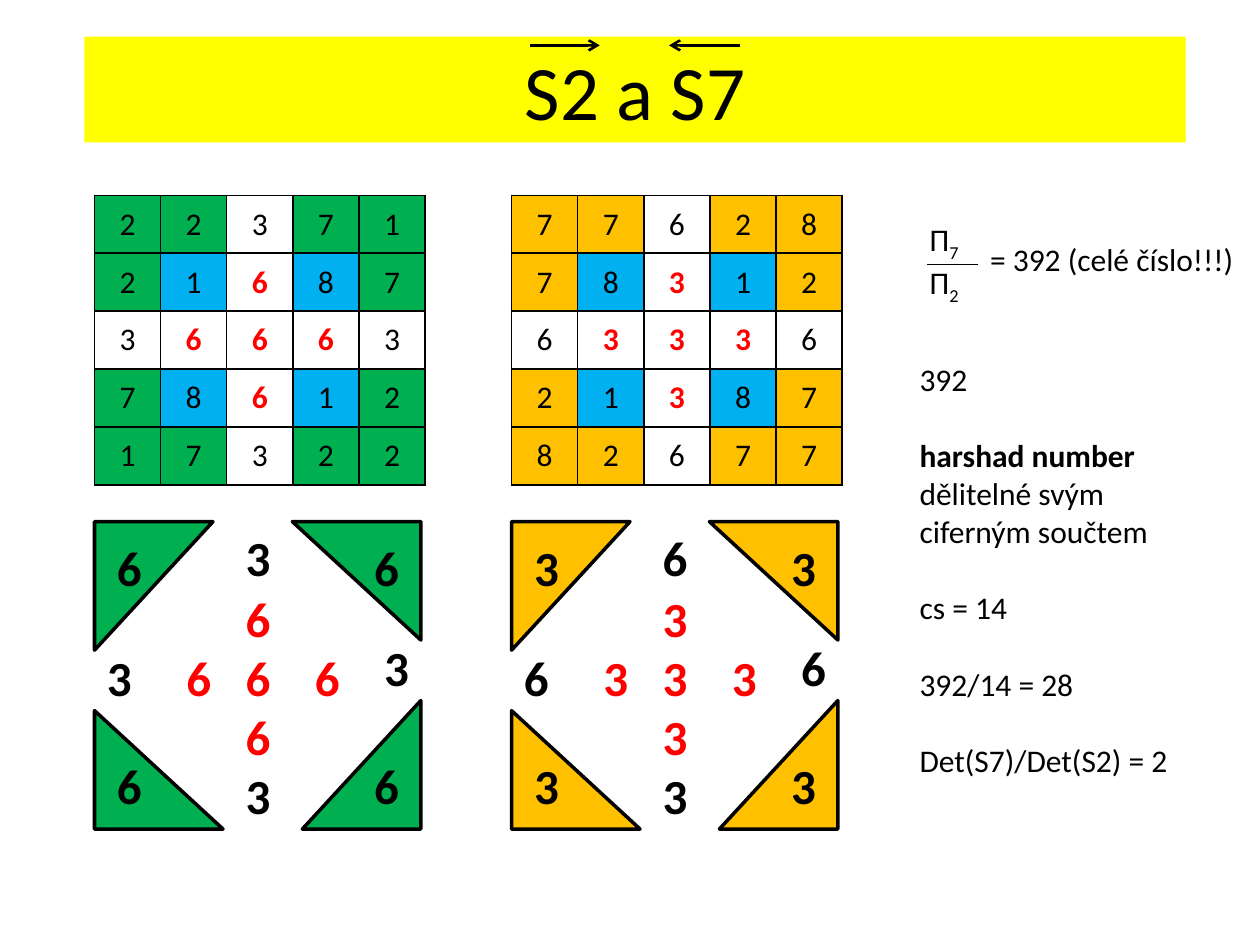
"""Build the slide comparing the number squares S2 and S7."""
from dataclasses import dataclass

from lxml.etree import SubElement
from pptx import Presentation
from pptx.dml.color import RGBColor
from pptx.enum.shapes import MSO_CONNECTOR as Connector, MSO_SHAPE as Shape
from pptx.enum.text import MSO_ANCHOR as Anchor, MSO_AUTO_SIZE as AutoSize, PP_ALIGN as Align
from pptx.oxml.ns import qn
from pptx.slide import Slide
from pptx.text.text import Font
from pptx.util import Inches, Pt

BLACK = RGBColor(0x00, 0x00, 0x00)
WHITE = RGBColor(0xFF, 0xFF, 0xFF)
YELLOW = RGBColor(0xFF, 0xFF, 0x00)
GREEN = RGBColor(0x00, 0xB0, 0x50)
ORANGE = RGBColor(0xFF, 0xC0, 0x00)
BLUE = RGBColor(0x00, 0xB0, 0xF0)
RED = RGBColor(0xFF, 0x00, 0x00)

SQUARE_TOP = 1.55
COLUMN_WIDTH = 0.525
ROW_HEIGHT = 0.46
MIDDLE = 2

CORNERS = [(-0.04, 4.18, 90), (1.57, 4.14, 180), (1.61, 5.6, 270), (0, 5.64, 0)]
CORNER_DIGITS = [(0.08, 4.22), (2.12, 4.22), (2.12, 5.95), (0.08, 5.95)]
EDGE_DIGITS = [(1.1, 4.14), (0, 5.09), (2.2, 5.01), (1.1, 6.03)]
CROSS_DIGITS = [(1.1, 5.09), (1.65, 5.09), (0.63, 5.09), (1.1, 4.62), (1.1, 5.56)]


@dataclass(frozen=True)
class Square:
    """A number square with its reduced corners, edges and cross."""
    left: float
    color: RGBColor
    rows: tuple[str, ...]
    corner: str
    edges: str
    cross: str


@dataclass(frozen=True)
class Note:
    """One paragraph of the explanation."""
    text: str
    gap: int = 22
    bold: bool = False


SQUARES = [
    Square(0.75, GREEN, ("22371", "21687", "36663", "78612", "17322"), "6", "3333", "6"),
    Square(4.06, ORANGE, ("77628", "78312", "63336", "21387", "82677"), "3", "6663", "3"),
]
NOTES = [
    Note("392", gap=0),
    Note("harshad number", bold=True),
    Note("dělitelné svým ciferným součtem", gap=0),
    Note("cs = 14"),
    Note("392/14 = 28"),
    Note("Det(S7)/Det(S2) = 2"),
]


def style(font: Font, size: float, color: RGBColor = BLACK, bold: bool = False) -> None:
    """Apply the slide's typeface and the given look."""
    font.name, font.size, font.bold = "Calibri", Pt(size), bold
    font.color.rgb = color


def add_text(slide: Slide, left: float, top: float, width: float, height: float,
             lines: list[str], size: float = 18, color: RGBColor = BLACK, bold: bool = False):
    """Add a wrapped text box and return its paragraphs."""
    frame = slide.shapes.add_textbox(Inches(left), Inches(top), Inches(width), Inches(height)).text_frame
    frame.word_wrap = True
    frame.auto_size = AutoSize.SHAPE_TO_FIT_TEXT
    frame.text = "\n".join(lines)
    for paragraph in frame.paragraphs:
        for run in paragraph.runs:
            style(run.font, size, color, bold)
    return frame.paragraphs


def add_line(slide: Slide, start: float, end: float, y: float, weight: float,
             arrow: bool = False) -> None:
    """Draw a horizontal line, optionally with an arrowhead at its end."""
    line = slide.shapes.add_connector(Connector.STRAIGHT, Inches(start), Inches(y), Inches(end), Inches(y))
    line.line.color.rgb = BLACK
    line.line.width = Pt(weight)
    properties = line.element.spPr
    if arrow:
        SubElement(properties.find(qn("a:ln")), qn("a:tailEnd"), type="arrow")
    SubElement(properties, qn("a:effectLst"))


def add_borders(cell_properties) -> None:
    """Put a black border on every side of a table cell."""
    for index, side in enumerate(("a:lnL", "a:lnR", "a:lnT", "a:lnB")):
        border = SubElement(cell_properties, qn(side), w=str(Pt(1)))
        fill = SubElement(border, qn("a:solidFill"))
        SubElement(fill, qn("a:srgbClr"), val=str(BLACK))
        cell_properties.insert(index, border)


def add_number_table(slide: Slide, square: Square) -> None:
    """Draw the square with coloured corners, inner diagonal cells and red cross."""
    count = len(square.rows)
    graphic = slide.shapes.add_table(count, count, Inches(square.left), Inches(SQUARE_TOP),
                                     Inches(COLUMN_WIDTH * count), Inches(ROW_HEIGHT * count))
    table = graphic.table
    table.first_row = table.horz_banding = False
    for row, digits in enumerate(square.rows):
        for column, digit in enumerate(digits):
            cell = table.cell(row, column)
            on_axis = MIDDLE in (row, column)
            inner = 0 < row < count - 1 and 0 < column < count - 1
            cell.fill.solid()
            cell.fill.fore_color.rgb = WHITE if on_axis else BLUE if inner else square.color
            cell.vertical_anchor = Anchor.MIDDLE
            cell.text = digit
            paragraph = cell.text_frame.paragraphs[0]
            paragraph.alignment = Align.CENTER
            in_cross = on_axis and inner
            style(paragraph.runs[0].font, 18, RED if in_cross else BLACK, in_cross)
    for cell_properties in graphic.element.iter(qn("a:tcPr")):
        add_borders(cell_properties)


def add_corners(slide: Slide, square: Square) -> None:
    """Draw the four corner triangles below the square."""
    for offset, top, rotation in CORNERS:
        triangle = slide.shapes.add_shape(Shape.RIGHT_TRIANGLE, Inches(square.left + offset),
                                          Inches(top), Inches(1.02), Inches(0.94))
        triangle.rotation = rotation
        triangle.shadow.inherit = False
        triangle.fill.solid()
        triangle.fill.fore_color.rgb = square.color
        triangle.line.color.rgb = BLACK
        triangle.line.width = Pt(2)


def add_digits(slide: Slide, square: Square) -> None:
    """Write the digits of the corners, edges and cross."""
    groups = [
        (CORNER_DIGITS, square.corner * len(CORNER_DIGITS), BLACK),
        (EDGE_DIGITS, square.edges, BLACK),
        (CROSS_DIGITS, square.cross * len(CROSS_DIGITS), RED),
    ]
    for places, digits, color in groups:
        for (offset, top), digit in zip(places, digits):
            add_text(slide, square.left + offset, top, 0.39, 0.57, [digit], 28, color, True)


def add_title(slide: Slide) -> None:
    """Fill in the yellow heading and its two direction arrows."""
    title = slide.shapes.title
    title.left, title.top, title.width, title.height = map(Inches, (0.67, 0.29, 8.74, 0.84))
    title.fill.solid()
    title.fill.fore_color.rgb = YELLOW
    title.text_frame.text = "S2 a S7"
    title.text_frame.auto_size = AutoSize.SHAPE_TO_FIT_TEXT
    heading = title.text_frame.paragraphs[0]
    heading.alignment = Align.CENTER
    style(heading.runs[0].font, 44)
    add_line(slide, 5.87, 5.31, 0.36, 1.5, arrow=True)
    add_line(slide, 4.21, 4.76, 0.36, 1.5, arrow=True)


def add_explanation(slide: Slide) -> None:
    """Write the quotient of the products and the notes about it."""
    for product, index in zip(add_text(slide, 7.28, 1.7, 2.2, 1.01, ["Π", "Π"]), "72"):
        subscript = product.add_run()
        subscript.text = index
        style(subscript.font, 18)
        subscript.font._element.set("baseline", "-25000")
    add_line(slide, 7.36, 7.76, 2.1, 1)
    add_text(slide, 7.76, 1.86, 2.2, 0.4, ["= 392 (celé číslo!!!)"])
    paragraphs = add_text(slide, 7.2, 2.81, 2.2, 3.43, [note.text for note in NOTES])
    for paragraph, note in zip(paragraphs, NOTES):
        paragraph.space_before = Pt(note.gap)
        paragraph.runs[0].font.bold = note.bold


def main() -> None:
    """Create and save the presentation."""
    deck = Presentation()
    deck.slide_width, deck.slide_height = Inches(10), Inches(7.5)
    slide = deck.slides.add_slide(deck.slide_layouts[5])
    add_title(slide)
    for square in SQUARES:
        add_number_table(slide, square)
        add_corners(slide, square)
        add_digits(slide, square)
    add_explanation(slide)
    deck.save("out.pptx")


if __name__ == "__main__":
    main()
